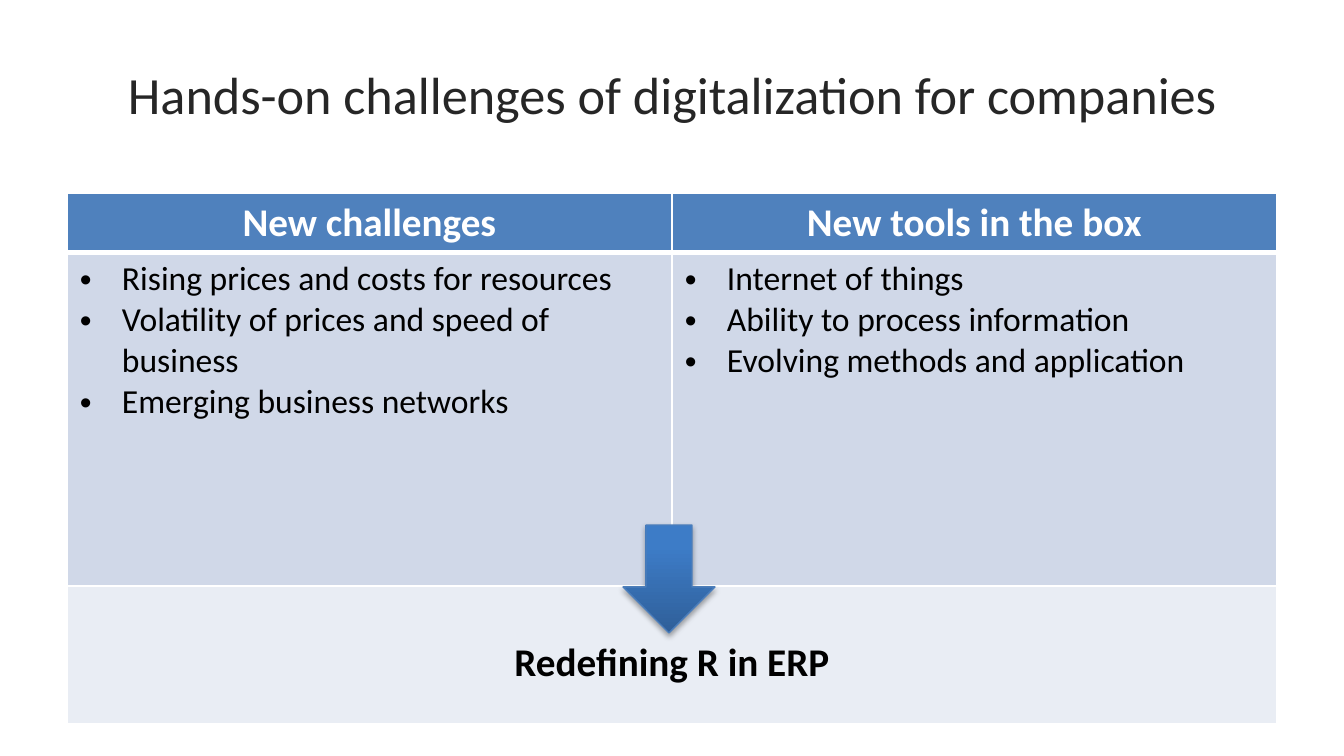
"""Build the slide on hands-on challenges of digitalization."""
from lxml import etree
from pptx import Presentation
from pptx.dml.color import RGBColor
from pptx.enum.shapes import MSO_SHAPE
from pptx.enum.text import MSO_ANCHOR, PP_ALIGN
from pptx.oxml.ns import qn
from pptx.util import Pt

TITLE_ONLY = 5
CENTER, LEFT = PP_ALIGN.CENTER, PP_ALIGN.LEFT
MIDDLE, TOP = MSO_ANCHOR.MIDDLE, MSO_ANCHOR.TOP
DOWN_ARROW = MSO_SHAPE.DOWN_ARROW
FONT = "Calibri"

TITLE = "Hands-on challenges of digitalization for companies"
COLUMNS = [
    ("New challenges", [
        "Rising prices and costs for resources",
        "Volatility of prices and speed of business",
        "Emerging business networks",
    ]),
    ("New tools in the box", [
        "Internet of things",
        "Ability to process information",
        "Evolving methods and application",
    ]),
]
CONCLUSION = "Redefining R in ERP"

SLIDE_W, SLIDE_H = 1344, 756
MARGIN = 67
TABLE_TOP = 193
ROW_HEIGHTS = [56, 333, 138]
TITLE_BOX = (MARGIN, 31, SLIDE_W - 2 * MARGIN, 126)
ARROW_BOX = (623, 525, 92, 108)
PAD_X, PAD_Y, INDENT = 13, 6, 42
CONCLUSION_PAD = 53
THIN, THICK = 1, 3


def px(n):
    return round(n * 914400 / 134.4)


def rgb(value):
    return RGBColor.from_string(value)


def style(p, size, color, bold=False, align=CENTER):
    p.alignment = align
    for r in p.runs:
        r.font.name, r.font.size, r.font.bold = FONT, Pt(size), bold
        r.font.color.rgb = rgb(color)


def add_bullet(p):
    pPr = p._p.get_or_add_pPr()
    pPr.set("marL", str(px(INDENT)))
    pPr.set("indent", str(-px(INDENT)))
    etree.SubElement(pPr, qn("a:buFont"), typeface="Arial")
    etree.SubElement(pPr, qn("a:buChar"), char="•")


def format_cell(cell, fill, top=THIN, bottom=THIN, pad_top=PAD_Y):
    cell.margin_left = cell.margin_right = px(PAD_X)
    cell.margin_top, cell.margin_bottom = px(pad_top), px(PAD_Y)
    cell.vertical_anchor = TOP
    tcPr = cell._tc.get_or_add_tcPr()
    for side, width in zip("LRTB", (THIN, THIN, top, bottom)):
        ln = etree.SubElement(tcPr, qn(f"a:ln{side}"), w=str(Pt(width)))
        solid = etree.SubElement(ln, qn("a:solidFill"))
        etree.SubElement(solid, qn("a:srgbClr"), val="FFFFFF")
    cell.fill.solid()
    cell.fill.fore_color.rgb = rgb(fill)


def add_title(s):
    title = s.shapes.title
    title.left, title.top, title.width, title.height = map(px, TITLE_BOX)
    tf = title.text_frame
    tf.text = TITLE
    tf.vertical_anchor = MIDDLE
    style(tf.paragraphs[0], 28, "262626")


def add_comparison(s):
    width = SLIDE_W - 2 * MARGIN
    box = map(px, (MARGIN, TABLE_TOP, width, sum(ROW_HEIGHTS)))
    table = s.shapes.add_table(len(ROW_HEIGHTS), len(COLUMNS), *box).table
    for row, height in zip(table.rows, ROW_HEIGHTS):
        row.height = px(height)
    for i, (heading, points) in enumerate(COLUMNS):
        table.columns[i].width = px(width / len(COLUMNS))
        head, body, foot = (table.cell(row, i) for row in range(3))
        format_cell(head, "4F81BD", bottom=THICK)
        format_cell(body, "D0D8E8", top=THICK)
        format_cell(foot, "E9EDF4", pad_top=CONCLUSION_PAD)
        head.text_frame.text = heading
        style(head.text_frame.paragraphs[0], 21, "FFFFFF", True)
        body.text_frame.text = "\n".join(points)
        for p in body.text_frame.paragraphs:
            style(p, 18, "000000", align=LEFT)
            add_bullet(p)
    foot = table.cell(2, 0)
    foot.merge(table.cell(2, len(COLUMNS) - 1))
    foot.text_frame.text = CONCLUSION
    style(foot.text_frame.paragraphs[0], 21, "000000", True)


def add_arrow(s):
    arrow = s.shapes.add_shape(DOWN_ARROW, *map(px, ARROW_BOX))
    arrow.fill.gradient()
    arrow.fill.gradient_angle = 90
    stops = [(0, "2F5F99"), (0.8, "3D7CC7")]
    for stop, (position, color) in zip(arrow.fill.gradient_stops, stops):
        stop.position, stop.color.rgb = position, rgb(color)
    arrow.line.color.rgb = rgb("4B7EBC")
    arrow.line.width = Pt(0.75)
    arrow.shadow.inherit = False
    effects = arrow._element.spPr.find(qn("a:effectLst"))
    shadow = etree.SubElement(effects, qn("a:outerShdw"), blurRad=str(Pt(3.1)),
                              dist=str(Pt(1.8)), dir="5400000", rotWithShape="0")
    color = etree.SubElement(shadow, qn("a:srgbClr"), val="000000")
    etree.SubElement(color, qn("a:alpha"), val="35000")


def main():
    prs = Presentation()
    prs.slide_width, prs.slide_height = px(SLIDE_W), px(SLIDE_H)
    s = prs.slides.add_slide(prs.slide_layouts[TITLE_ONLY])
    add_title(s)
    add_comparison(s)
    add_arrow(s)
    prs.save("out.pptx")


if __name__ == "__main__":
    main()
